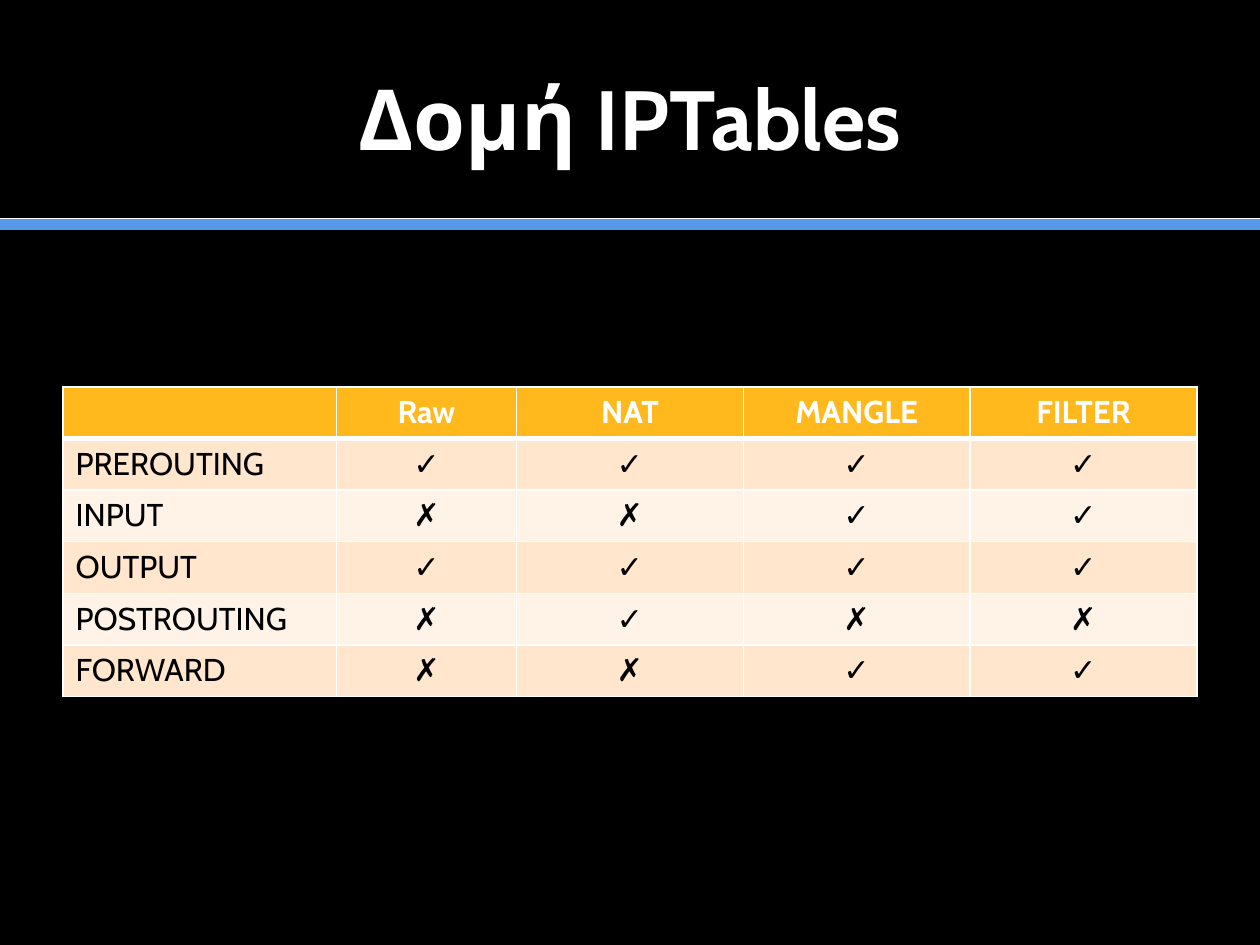
import pptx
import pptx.dml.color
import pptx.enum.shapes
import pptx.enum.text
import pptx.oxml.ns
import pptx.util
from lxml import etree
from pptx.util import Inches

RGBColor = pptx.dml.color.RGBColor
BLACK = RGBColor(0x00, 0x00, 0x00)
WHITE = RGBColor(0xFF, 0xFF, 0xFF)
BLUE = RGBColor(0x57, 0x99, 0xE8)
AMBER = RGBColor(0xFF, 0xB9, 0x1D)
PEACH = RGBColor(0xFF, 0xE6, 0xCD)
CREAM = RGBColor(0xFF, 0xF3, 0xE8)

CENTER = pptx.enum.text.PP_ALIGN.CENTER
LEFT = pptx.enum.text.PP_ALIGN.LEFT
TOP = pptx.enum.text.MSO_ANCHOR.TOP
MIDDLE = pptx.enum.text.MSO_ANCHOR.MIDDLE

TABLE_NAMES = ["", "Raw", "NAT", "MANGLE", "FILTER"]
CHAINS = [
    ["PREROUTING", "✓", "✓", "✓", "✓"],
    ["INPUT", "✗", "✗", "✓", "✓"],
    ["OUTPUT", "✓", "✓", "✓", "✓"],
    ["POSTROUTING", "✗", "✓", "✗", "✗"],
    ["FORWARD", "✗", "✗", "✓", "✓"],
]
COLUMN_WIDTHS = [2.17, 1.43, 1.8, 1.8, 1.8]


def write_run(paragraph, text, size, font_name, color, bold, alignment):
    paragraph.alignment = alignment
    run = paragraph.add_run()
    run.text = text
    run.font.size = pptx.util.Pt(size)
    run.font.name = font_name
    run.font.bold = bold
    run.font.color.rgb = color


def add_title(slide, left, top, width, height):
    title = slide.shapes.title
    title.left, title.top = Inches(left), Inches(top)
    title.width, title.height = Inches(width), Inches(height)
    title.text_frame.vertical_anchor = MIDDLE
    write_run(title.text_frame.paragraphs[0], "Δομή IPTables", 48, "Cabin", WHITE, True, CENTER)


def add_rule(slide, left, top, width, color, weight):
    line = slide.shapes.add_connector(
        pptx.enum.shapes.MSO_CONNECTOR.STRAIGHT,
        Inches(left), Inches(top), Inches(left + width), Inches(top))
    line.line.color.rgb = color
    line.line.width = pptx.util.Pt(weight)
    etree.SubElement(line._element.spPr, pptx.oxml.ns.qn("a:effectLst"))


def add_divider(slide, left, top, width):
    add_rule(slide, left, top + 0.05, width, BLUE, 7)
    add_rule(slide, left, top, width, WHITE, 0.5)


def set_borders(cell, weights):
    properties = cell._tc.get_or_add_tcPr()
    for side, weight in weights.items():
        border = etree.SubElement(
            properties, pptx.oxml.ns.qn(f"a:ln{side}"), w=str(pptx.util.Pt(weight)))
        fill = etree.SubElement(border, pptx.oxml.ns.qn("a:solidFill"))
        etree.SubElement(fill, pptx.oxml.ns.qn("a:srgbClr"), val=str(WHITE))


def format_cell(cell, text, row, column):
    is_header = row == 0
    is_mark = not is_header and column > 0
    set_borders(cell, {"L": 1, "R": 1, "T": 3 if row == 1 else 1, "B": 3 if is_header else 1})
    cell.fill.solid()
    cell.fill.fore_color.rgb = AMBER if is_header else PEACH if row % 2 else CREAM
    cell.vertical_anchor = MIDDLE if is_mark else TOP
    if text:
        write_run(cell.text_frame.paragraphs[0], text, 18, "Arial" if is_mark else "Cabin",
                  WHITE if is_header else BLACK, is_header, CENTER if column else LEFT)


def add_chain_table(slide, left, top, width, row_height):
    rows = [TABLE_NAMES] + CHAINS
    table = slide.shapes.add_table(
        len(rows), len(TABLE_NAMES), Inches(left), Inches(top),
        Inches(width), Inches(row_height * len(rows))).table
    for column, share in zip(table.columns, COLUMN_WIDTHS):
        column.width = Inches(width * share / sum(COLUMN_WIDTHS))
    for row_index, texts in enumerate(rows):
        table.rows[row_index].height = Inches(row_height)
        for column_index, text in enumerate(texts):
            format_cell(table.cell(row_index, column_index), text, row_index, column_index)


def main():
    presentation = pptx.Presentation()
    presentation.slide_width, presentation.slide_height = Inches(10), Inches(7.5)
    slide = presentation.slides.add_slide(presentation.slide_layouts.get_by_name("Title Only"))
    slide.background.fill.solid()
    slide.background.fill.fore_color.rgb = BLACK
    add_divider(slide, 0, 1.73, 10)
    add_title(slide, 0.5, 0.3, 9, 1.25)
    add_chain_table(slide, 0.5, 3.07, 9, 0.41)
    presentation.save("out.pptx")


if __name__ == "__main__":
    main()
